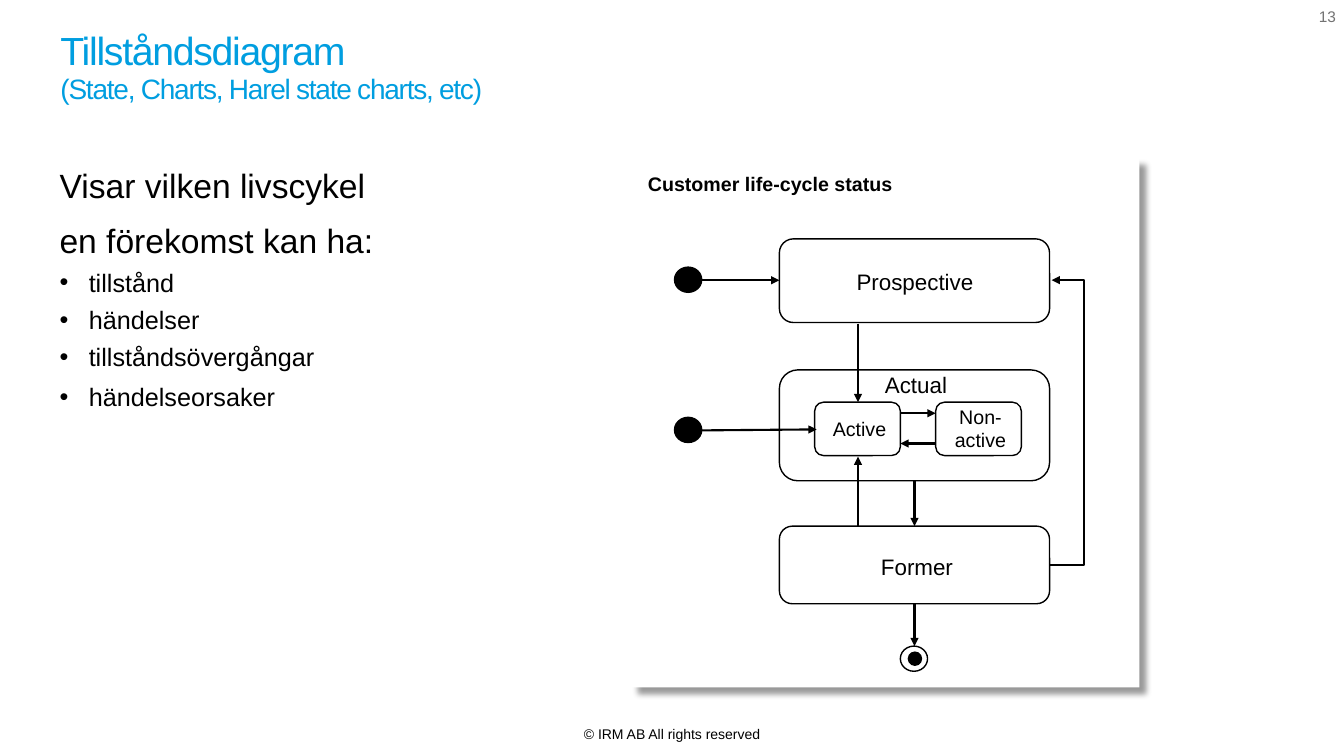
from dataclasses import dataclass

from lxml import etree
from pptx import Presentation
from pptx.dml.color import RGBColor
from pptx.enum.shapes import MSO_CONNECTOR, MSO_SHAPE
from pptx.enum.text import MSO_ANCHOR, MSO_AUTO_SIZE, PP_ALIGN
from pptx.oxml.ns import qn
from pptx.util import Inches, Pt

BLACK = RGBColor(0x00, 0x00, 0x00)
WHITE = RGBColor(0xFF, 0xFF, 0xFF)
SKY = RGBColor(0x00, 0x9E, 0xE0)
GREY = RGBColor(0x73, 0x73, 0x73)
FONT = "Arial"

RECTANGLE, ROUNDED, OVAL = MSO_SHAPE.RECTANGLE, MSO_SHAPE.ROUNDED_RECTANGLE, MSO_SHAPE.OVAL
STRAIGHT, ELBOW = MSO_CONNECTOR.STRAIGHT, MSO_CONNECTOR.ELBOW
LEFT, CENTER, RIGHT = PP_ALIGN.LEFT, PP_ALIGN.CENTER, PP_ALIGN.RIGHT
TOP, MIDDLE = MSO_ANCHOR.TOP, MSO_ANCHOR.MIDDLE
NO_FIT = MSO_AUTO_SIZE.NONE

Area = tuple[float, float, float, float]
Point = tuple[float, float]


@dataclass
class State:
    area: Area
    label_area: Area
    lines: tuple[str, ...]
    size: int = 16


@dataclass
class Transition:
    start: Point
    end: Point


@dataclass
class ListLine:
    text: str
    size: int = 18
    before: int = 5
    bullet: bool = True


STATES = [
    State((7.73, 2.37, 2.68, 0.83), (8.39, 2.61, 1.37, 0.36), ("Prospective",)),
    State((7.73, 3.67, 2.68, 1.1), (8.4, 3.62, 1.37, 0.4), ("Actual",)),
    State((7.73, 5.22, 2.68, 0.77), (8.41, 5.44, 1.37, 0.36), ("Former",)),
    State((8.08, 3.99, 0.85, 0.53), (8.14, 4.05, 0.77, 0.4), ("Active",), 14),
    State((9.28, 3.99, 0.85, 0.53), (9.34, 4.05, 0.77, 0.4), ("Non-", "active"), 14),
]
TRANSITIONS = [
    Transition((8.51, 3.21), (8.51, 3.99)),
    Transition((9.07, 4.77), (9.07, 5.22)),
    Transition((6.96, 2.78), (7.73, 2.78)),
    Transition((8.93, 4.1), (9.28, 4.1)),
    Transition((9.28, 4.4), (8.93, 4.4)),
    Transition((9.07, 5.99), (9.07, 6.41)),
    Transition((6.96, 4.27), (8.1, 4.26)),
    Transition((8.51, 5.22), (8.51, 4.53)),
]
RETURN_TRANSITION = Transition((10.41, 5.61), (10.43, 2.78))
RETURN_BEND = 10.75
MARKERS = [
    ((6.69, 2.65, 0.27, 0.25), BLACK),
    ((6.69, 4.14, 0.27, 0.25), BLACK),
    ((8.93, 6.41, 0.27, 0.25), WHITE),
    ((9.01, 6.47, 0.13, 0.13), BLACK),
]
LIST_LINES = [
    ListLine("Visar vilken livscykel", 24, 0, False),
    ListLine("en förekomst kan ha:", 24, 10, False),
    ListLine("tillstånd"),
    ListLine("händelser"),
    ListLine("tillståndsövergångar"),
    ListLine("händelseorsaker", before=7),
]


def set_all(target, values: dict) -> None:
    for name, value in values.items():
        setattr(target, name, value)


def style_font(font, size: float, color: RGBColor = BLACK, bold: bool = False) -> None:
    set_all(font, {"name": FONT, "size": Pt(size), "bold": bold})
    font.color.rgb = color


def place(shape, area: Area) -> None:
    names = ("left", "top", "width", "height")
    set_all(shape, {name: Inches(length) for name, length in zip(names, area)})


def add_text(page, area: Area, lines: tuple[str, ...], size: float, color: RGBColor = BLACK,
             bold: bool = False, align=CENTER, anchor=MIDDLE, wrap: bool = False):
    box = page.shapes.add_textbox(*map(Inches, area))
    frame = box.text_frame
    set_all(frame, {"word_wrap": wrap, "vertical_anchor": anchor, "text": "\n".join(lines)})
    for para in frame.paragraphs:
        para.alignment = align
        style_font(para.font, size, color, bold)
    return box


def add_figure(page, kind, area: Area, fill: RGBColor = WHITE, outlined: bool = True):
    shape = page.shapes.add_shape(kind, *map(Inches, area))
    shape.shadow.inherit = False
    shape.fill.solid()
    shape.fill.fore_color.rgb = fill
    if outlined:
        shape.line.color.rgb = BLACK
        shape.line.width = Pt(1)
    else:
        shape.line.fill.background()
    return shape


def add_arrow(page, transition: Transition, kind=STRAIGHT):
    arrow = page.shapes.add_connector(kind, *map(Inches, transition.start + transition.end))
    arrow.line.color.rgb = BLACK
    arrow.line.width = Pt(1.5)
    properties = arrow._element.spPr
    etree.SubElement(properties.find(qn("a:ln")), qn("a:tailEnd"), type="triangle")
    etree.SubElement(properties, qn("a:effectLst"))
    return arrow


def add_return_arrow(page) -> None:
    """Route the elbow out to the right of both of its ends."""
    arrow = add_arrow(page, RETURN_TRANSITION, ELBOW)
    start, end = RETURN_TRANSITION.start[0], RETURN_TRANSITION.end[0]
    bend = round((RETURN_BEND - start) / (end - start) * 100000)
    guides = arrow._element.spPr.find(qn("a:prstGeom")).get_or_add_avLst()
    etree.SubElement(guides, qn("a:gd"), name="adj1", fmla=f"val {bend}")


def add_panel(page) -> None:
    panel = add_figure(page, RECTANGLE, (6.26, 1.57, 5.04, 5.25), outlined=False)
    effects = panel._element.spPr.find(qn("a:effectLst"))
    shadow = etree.SubElement(effects, qn("a:outerShdw"), blurRad=str(Pt(4)), dist=str(Pt(7)),
                              dir=str(45 * 60000), algn="tl", rotWithShape="0")
    color = etree.SubElement(shadow, qn("a:srgbClr"), val=str(BLACK))
    etree.SubElement(color, qn("a:alpha"), val="40000")


def fill_title(page) -> None:
    title = page.shapes.title
    place(title, (0.5, 0.25, 11.8, 0.85))
    set_all(title.text_frame, {"auto_size": NO_FIT, "vertical_anchor": MIDDLE, "word_wrap": True})
    para = title.text_frame.paragraphs[0]
    set_all(para, {"alignment": LEFT, "line_spacing": 0.95})
    for text, size in (("Tillståndsdiagram", 28), ("(State, Charts, Harel state charts, etc)", 20)):
        if para.runs:
            para.add_line_break()
        span = para.add_run()
        span.text = text
        style_font(span.font, size, SKY)
        span._r.get_or_add_rPr().set("spc", "-90")


def fill_body(page) -> None:
    body = page.placeholders[1]
    place(body, (0.49, 1.59, 12.18, 5.61))
    frame = body.text_frame
    set_all(frame, {"auto_size": NO_FIT, "vertical_anchor": TOP, "margin_right": Inches(0.16)})
    frame.text = "\n".join(line.text for line in LIST_LINES)
    for para, line in zip(frame.paragraphs, LIST_LINES):
        para.level = int(line.bullet)
        set_all(para, {"space_before": Pt(line.before), "alignment": LEFT})
        properties = para._p.get_or_add_pPr()
        indent = Inches(0.29) if line.bullet else 0
        properties.set("marL", str(indent))
        properties.set("indent", str(-indent))
        if line.bullet:
            etree.SubElement(properties, qn("a:buFont"), typeface=FONT)
            etree.SubElement(properties, qn("a:buChar"), char="•")
        else:
            etree.SubElement(properties, qn("a:buNone"))
        style_font(para.font, line.size)


def add_diagram(page) -> None:
    add_panel(page)
    add_text(page, (6.29, 1.64, 2.7, 0.36), ("Customer life-cycle status",), 14, bold=True)
    for state in STATES:
        add_figure(page, ROUNDED, state.area)
        add_text(page, state.label_area, state.lines, state.size)
    for transition in TRANSITIONS:
        add_arrow(page, transition)
    add_return_arrow(page)
    for area, fill in MARKERS:
        add_figure(page, OVAL, area, fill)


def main() -> None:
    deck = Presentation()
    set_all(deck, {"slide_width": Inches(13.33), "slide_height": Inches(7.5)})
    page = deck.slides.add_slide(deck.slide_layouts[1])
    fill_title(page)
    fill_body(page)
    add_diagram(page)
    add_text(page, (0, 7.15, 13.33, 0.27), ("© IRM AB All rights reserved",), 10,
             anchor=TOP, wrap=True)
    number = add_text(page, (12.31, 0.07, 0.94, 0.29), ("13",), 11, GREY,
                      align=RIGHT, anchor=TOP, wrap=True)
    sides = ("left", "top", "right", "bottom")
    set_all(number.text_frame, {f"margin_{side}": 0 for side in sides})
    deck.save("out.pptx")


if __name__ == "__main__":
    main()
